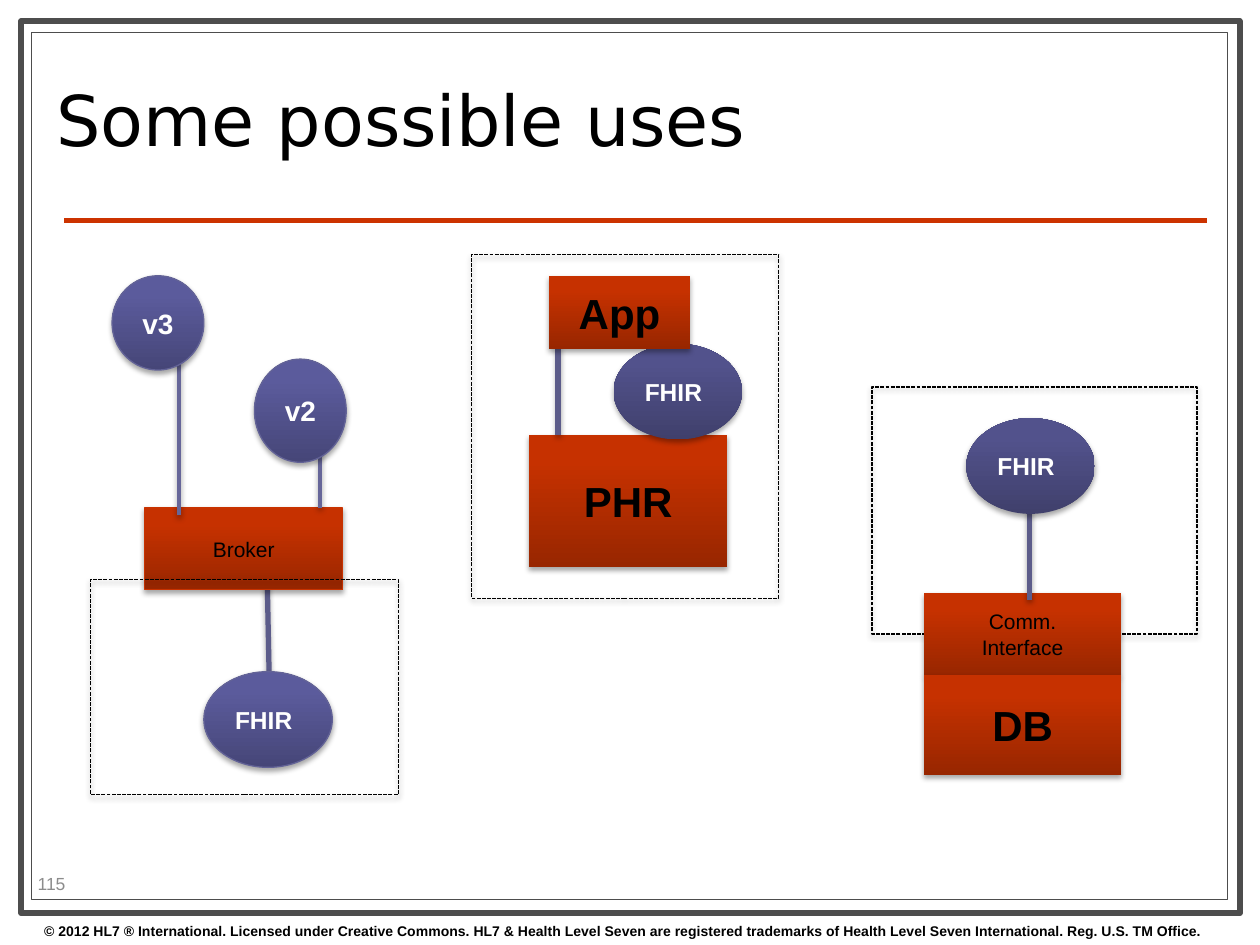
from copy import deepcopy
from dataclasses import dataclass

from lxml import etree
from pptx import Presentation
from pptx.dml.color import RGBColor
from pptx.enum.dml import MSO_LINE_DASH_STYLE as Dash
from pptx.enum.shapes import MSO_CONNECTOR_TYPE as Connector
from pptx.enum.shapes import MSO_AUTO_SHAPE_TYPE as Shape
from pptx.enum.text import MSO_VERTICAL_ANCHOR as Anchor
from pptx.enum.text import PP_PARAGRAPH_ALIGNMENT as Align
from pptx.oxml.ns import qn
from pptx.util import Cm, Pt

BLANK_LAYOUT = 6


@dataclass(frozen=True)
class Theme:
    white: str = "FFFFFF"
    black: str = "000000"
    frame: str = "4D4D4D"
    accent: str = "CC3300"
    muted: str = "8C8C8C"
    link: str = "5C5C8A"
    thin_link: str = "666699"
    system: tuple = ("982600", "C63100", "C73200")
    system_edge: str = "C83200"
    message: tuple = ("464678", "5B5B9C", "5B5B9E")
    message_edge: str = "636397"
    dark_message: tuple = ("40406C", "52528C", "52528E")
    stops: tuple = (0, 0.8, 1)
    # opacity in percent, blur and distance in points
    strong_shadow: tuple = (35, 3.1, 1.8)
    soft_shadow: tuple = (38, 3.1, 1.6)
    body_font: str = "Arial"
    title_font: str = "DejaVu Sans"
    title_size: int = 40
    system_size: int = 24
    version_size: int = 16
    message_size: int = 14
    label_size: int = 12
    number_size: int = 10
    footer_size: int = 8


class SlideBuilder:
    def __init__(self, slide, theme):
        self.slide, self.shapes, self.theme = slide, slide.shapes, theme

    def set_text(self, holder, text, size, color, font=None, bold=False,
                 align=Align.LEFT, spacing=None):
        frame = holder.text_frame
        frame.word_wrap = True
        frame.vertical_anchor = Anchor.MIDDLE
        frame.text = text
        formats = {"name": font or self.theme.body_font, "size": Pt(size), "bold": bold}
        for paragraph in frame.paragraphs:
            for name, value in {"alignment": align, "line_spacing": spacing}.items():
                setattr(paragraph, name, value)
            for name, value in formats.items():
                setattr(paragraph.font, name, value)
            paragraph.font.color.rgb = RGBColor.from_string(color)

    def text(self, box, text, size, color, **formats):
        holder = self.shapes.add_textbox(*map(Cm, box))
        self.set_text(holder, text, size, color, **formats)

    def cast_shadow(self, effects, shadow):
        """Add a shadow that falls straight down to an effect list."""
        opacity, blur, distance = shadow
        outer = etree.SubElement(effects, qn("a:outerShdw"), {
            "blurRad": str(Pt(blur)), "dist": str(Pt(distance)),
            "dir": "5400000", "rotWithShape": "0"})
        color = etree.SubElement(outer, qn("a:srgbClr"), val=self.theme.black)
        etree.SubElement(color, qn("a:alpha"), val=str(opacity * 1000))

    def paint_gradient(self, fill, colors):
        """Fill with three colours, running from bottom to top."""
        fill.gradient()
        fill.gradient_angle = 90
        first = fill._fill._gradFill.gsLst[0]
        first.addnext(deepcopy(first))
        for stop, color, place in zip(fill.gradient_stops, colors, self.theme.stops):
            stop.color.rgb = RGBColor.from_string(color)
            stop.position = place

    def shape(self, kind, box, fill=None, edge=None, width=0.75, dash=None, shadow=None):
        """Add a shape; fill is a colour, a tuple of gradient colours or None."""
        shape = self.shapes.add_shape(kind, *map(Cm, box))
        if fill is None:
            shape.fill.background()
        elif isinstance(fill, tuple):
            self.paint_gradient(shape.fill, fill)
        else:
            shape.fill.solid()
            shape.fill.fore_color.rgb = RGBColor.from_string(fill)
        if edge:
            shape.line.color.rgb = RGBColor.from_string(edge)
            for name, value in {"width": Pt(width), "dash_style": dash}.items():
                setattr(shape.line, name, value)
        else:
            shape.line.fill.background()
        shape.shadow.inherit = False
        if shadow:
            self.cast_shadow(shape._element.spPr.find(qn("a:effectLst")), shadow)
        return shape

    def frame(self, box, width):
        self.shape(Shape.RECTANGLE, box, self.theme.white, self.theme.frame, width)

    def zone(self, box):
        self.shape(Shape.RECTANGLE, box, edge=self.theme.black,
                   dash=Dash.SQUARE_DOT, shadow=self.theme.soft_shadow)

    def system(self, box, text, size, bold=True, edge=None):
        block = self.shape(Shape.RECTANGLE, box, self.theme.system, edge,
                           shadow=self.theme.strong_shadow)
        self.set_text(block, text, size, self.theme.black, bold=bold, align=Align.CENTER)

    def message(self, box, text, size, align, dark=False):
        theme = self.theme
        fill, edge = (theme.dark_message, None) if dark else (theme.message, theme.message_edge)
        oval = self.shape(Shape.OVAL, box, fill, edge, shadow=theme.strong_shadow)
        self.set_text(oval, text, size, theme.white, bold=True, align=align)

    def fhir(self, left, top, dark=True):
        self.message((left, top, 2.59, 1.93), "FHIR", self.theme.message_size,
                     Align.LEFT, dark)

    def version(self, box, text):
        self.message(box, text, self.theme.version_size, Align.CENTER)

    def line(self, ends, color, width, shadow=None):
        line = self.shapes.add_connector(Connector.STRAIGHT, *map(Cm, ends))
        line.line.color.rgb = RGBColor.from_string(color)
        line.line.width = Pt(width)
        effects = etree.SubElement(line._element.spPr, qn("a:effectLst"))
        if shadow:
            self.cast_shadow(effects, shadow)

    def link(self, *ends):
        self.line(ends, self.theme.link, 3, self.theme.strong_shadow)

    def thin_link(self, *ends):
        self.line(ends, self.theme.thin_link, 2, self.theme.soft_shadow)


def draw_page(page):
    theme = page.theme
    page.frame((0.43, 0.43, 24.56, 17.98), 3.5)
    page.frame((0.64, 0.66, 24.1, 17.48), 0.75)
    page.line((1.3, 4.45, 24.33, 4.45), theme.accent, 3)
    page.text((0.64, 18.47, 24.76, 0.58),
              "© 2012 HL7 ® International. Licensed under Creative Commons. "
              "HL7 & Health Level Seven are registered trademarks of "
              "Health Level Seven International. Reg. U.S. TM Office.",
              theme.footer_size, theme.black, bold=True)
    page.text((0.89, 0.91, 18.21, 3.28), "Some possible uses", theme.title_size,
              theme.black, font=theme.title_font, spacing=0.8)
    page.text((0.51, 17.5, 2.01, 0.61), "115", theme.number_size, theme.muted)


def draw_broker(page):
    page.link(5.44, 14.33, 5.38, 11.35)
    page.fhir(4.11, 13.54, dark=False)
    page.system((2.92, 10.24, 3.99, 1.65), "Broker", page.theme.label_size,
                bold=False, edge=page.theme.system_edge)
    page.thin_link(3.61, 10.39, 3.61, 6.73)
    page.version((2.26, 5.56, 1.85, 1.9), "v3")
    page.zone((1.83, 11.68, 6.2, 4.34))
    page.thin_link(6.45, 10.24, 6.45, 8.51)
    page.version((5.13, 7.24, 1.85, 2.08), "v2")


def draw_health_record(page):
    page.system((10.67, 8.76, 3.99, 2.67), "PHR", page.theme.system_size)
    page.link(11.25, 8.76, 11.25, 6.96)
    page.zone((9.5, 5.13, 6.2, 6.93))
    page.fhir(12.37, 6.93)
    page.system((11.07, 5.56, 2.84, 1.47), "App", page.theme.system_size)


def draw_database(page):
    page.zone((17.58, 7.8, 6.55, 4.98))
    page.system((18.62, 11.96, 3.99, 1.65), "Comm.\nInterface",
                page.theme.label_size, bold=False)
    page.system((18.62, 13.61, 3.99, 2.01), "DB", page.theme.system_size)
    page.link(20.75, 12.09, 20.75, 10.06)
    page.fhir(19.48, 8.43)


def main():
    deck = Presentation()
    deck.slide_width, deck.slide_height = Cm(25.4), Cm(19.05)
    slide = deck.slides.add_slide(deck.slide_layouts[BLANK_LAYOUT])
    page = SlideBuilder(slide, Theme())
    for draw in (draw_page, draw_broker, draw_health_record, draw_database):
        draw(page)
    deck.save("out.pptx")


if __name__ == "__main__":
    main()
